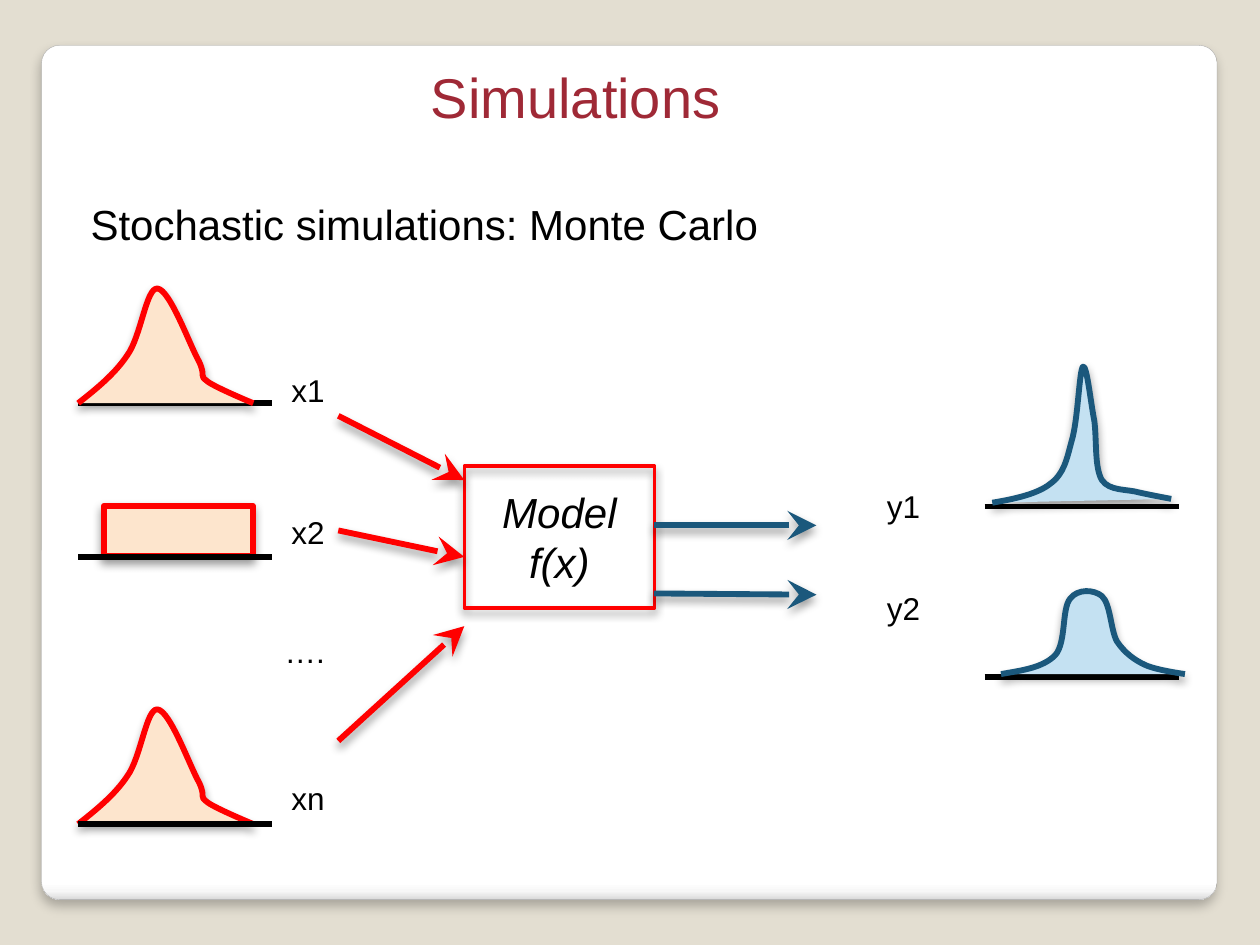
from dataclasses import dataclass

from lxml.etree import SubElement
from pptx import Presentation
from pptx.dml.color import RGBColor
from pptx.enum.shapes import MSO_CONNECTOR, MSO_SHAPE
from pptx.enum.text import MSO_ANCHOR, MSO_AUTO_SIZE, PP_ALIGN
from pptx.oxml import parse_xml
from pptx.oxml.ns import nsdecls, qn
from pptx.util import Inches, Pt

# Grid: 100 columns by 75 rows
COLS, ROWS = 100, 75
CELL = Inches(10) // COLS

BACKGROUND = RGBColor(0xE3, 0xDE, 0xD1)
PANEL_LINE = RGBColor(0xA4, 0xA4, 0xA4)
CRIMSON = RGBColor(0x9F, 0x29, 0x36)
BLACK = RGBColor(0, 0, 0)
RED = RGBColor(0xFF, 0, 0)
PEACH = RGBColor(0xFD, 0xE5, 0xCD)
NAVY = RGBColor(0x1B, 0x58, 0x7C)
SKY = RGBColor(0xC4, 0xE1, 0xF2)
FONT = "Arial"
STROKE = 3.35
AXIS_COLS = 15.4
INPUT_COL, OUTPUT_COL = 6.2, 78.15
PANEL_STOPS = [(0, "FFFFFF"), (98, "FFFFFF"), (99, "F7F7F7"), (100, "DADADA")]

Point = tuple[float, float]


@dataclass
class Label:
    text: str
    col: float
    row: float
    cols: float
    rows: float = 4
    size: int = 18
    italic: bool = False
    align: PP_ALIGN = PP_ALIGN.LEFT
    wrap: bool = False


@dataclass
class Arrow:
    start: Point
    end: Point
    color: RGBColor


@dataclass
class Curve:
    """Bezier outline: a start point, then three points per segment,
    measured from the left end of the axis."""
    points: list[Point]
    fill: RGBColor
    line: RGBColor


BELL = Curve([(0, 0), (1.4, -1.1), (2.9, -2.3), (3.9, -3.8),
              (5, -5.3), (5.4, -9.2), (6.3, -9.1),
              (7.3, -9), (8.9, -4.5), (9.6, -3.3),
              (10.2, -2), (9.5, -2.3), (10.3, -1.7),
              (11, -1.2), (13.9, 0), (13.9, 0)], PEACH, RED)
SPIKE = Curve([(0.6, -0.3), (2.4, -0.6), (4.2, -1), (5.2, -1.8),
               (6.3, -2.6), (6.5, -3.7), (6.9, -5.2),
               (7.4, -6.8), (7.5, -10.8), (7.8, -11.1),
               (8.1, -11.3), (8.4, -8.3), (8.7, -6.8),
               (8.9, -5.3), (8.7, -3.1), (9.3, -2.1),
               (9.9, -1.2), (11.3, -1.4), (12.3, -1.1),
               (13.2, -0.9), (14.8, -0.6), (14.8, -0.6)], SKY, NAVY)
DOME = Curve([(1.3, -0.2), (3, -0.5), (4.6, -0.7), (5.6, -1.7),
              (6.5, -2.7), (6.1, -5.4), (6.8, -6.2),
              (7.4, -7), (8.7, -6.9), (9.3, -6.4),
              (10, -5.8), (10, -3.7), (10.5, -2.8),
              (11.1, -1.9), (11.9, -1.3), (12.8, -0.9),
              (13.7, -0.5), (15.9, -0.2), (15.9, -0.2)], SKY, NAVY)


def grid(*lengths: float) -> list[int]:
    return [round(length * CELL) for length in lengths]


def add_effects(sp, blur: float = 5.2, dist: float = 3, alpha: int = 40) -> None:
    """Give a shape a soft shadow below, or none when alpha is 0."""
    shadow = (f'<a:outerShdw blurRad="{Pt(blur)}" dist="{Pt(dist)}" dir="5400000"'
              f' algn="ctr" rotWithShape="0"><a:srgbClr val="000000">'
              f'<a:alpha val="{alpha * 1000}"/></a:srgbClr></a:outerShdw>') if alpha else ""
    spPr = sp._element.spPr
    for old in spPr.findall(qn("a:effectLst")):
        spPr.remove(old)
    spPr.append(parse_xml(f'<a:effectLst {nsdecls("a")}>{shadow}</a:effectLst>'))


def set_line(sp, color: RGBColor, width: float) -> None:
    sp.line.color.rgb = color
    sp.line.width = Pt(width)


def add_box(s, kind: MSO_SHAPE, box: tuple, line: RGBColor, width: float,
            fill: RGBColor | None = None):
    sp = s.shapes.add_shape(kind, *grid(*box))
    if fill is None:
        sp.fill.background()
    else:
        sp.fill.solid()
        sp.fill.fore_color.rgb = fill
    set_line(sp, line, width)
    add_effects(sp)
    return sp


def add_panel(s) -> None:
    sp = add_box(s, MSO_SHAPE.ROUNDED_RECTANGLE, (3.3, 3.6, 93.3, 67.8), PANEL_LINE, 0.16)
    sp.adjustments[0] = 0.021
    stops = "".join(f'<a:gs pos="{pos * 1000}"><a:srgbClr val="{color}"/></a:gs>'
                    for pos, color in PANEL_STOPS)
    spPr = sp._element.spPr
    spPr.replace(spPr.find(qn("a:noFill")), parse_xml(
        f'<a:gradFill {nsdecls("a")} rotWithShape="1"><a:gsLst>{stops}</a:gsLst>'
        '<a:lin ang="5400000" scaled="0"/></a:gradFill>'))
    add_effects(sp, 6, 4, 25)
    s.shapes._spTree.insert(2, sp._element)  # behind the title


def format_text(tf, label: Label, color: RGBColor = BLACK) -> None:
    tf.text = label.text
    tf.word_wrap = label.wrap
    tf.auto_size = MSO_AUTO_SIZE.SHAPE_TO_FIT_TEXT
    tf.vertical_anchor = MSO_ANCHOR.TOP
    for p in tf.paragraphs:
        p.alignment = label.align
        p.font.name = FONT
        p.font.size = Pt(label.size)
        p.font.italic = label.italic
        p.font.color.rgb = color


def add_label(s, label: Label) -> None:
    tb = s.shapes.add_textbox(*grid(label.col, label.row, label.cols, label.rows))
    format_text(tb.text_frame, label)


def add_line(s, start: Point, end: Point, color: RGBColor):
    cn = s.shapes.add_connector(MSO_CONNECTOR.STRAIGHT, *grid(*start, *end))
    set_line(cn, color, STROKE)
    add_effects(cn, alpha=0)
    return cn


def add_arrow(s, arrow: Arrow) -> None:
    cn = add_line(s, arrow.start, arrow.end, arrow.color)
    SubElement(cn.line._get_or_add_ln(), qn("a:tailEnd"), type="stealth", w="lg", len="lg")
    add_effects(cn)


def add_axis(s, col: float, row: float) -> None:
    add_line(s, (col, row), (col + AXIS_COLS, row), BLACK)


def add_curve(s, curve: Curve, col: float, row: float) -> None:
    start, *rest = [grid(col + x, row + y) for x, y in curve.points]
    fb = s.shapes.build_freeform(*start)
    fb.add_line_segments(rest, close=False)
    sp = fb.convert_to_shape()
    # Turn every three straight segments into one cubic Bezier
    segments = list(sp._element.iter(qn("a:lnTo")))
    for i in range(0, len(segments), 3):
        bezier = SubElement(segments[i].getparent(), qn("a:cubicBezTo"))
        for segment in segments[i:i + 3]:
            bezier.append(segment[0])
            segment.getparent().remove(segment)
    sp.fill.solid()
    sp.fill.fore_color.rgb = curve.fill
    set_line(sp, curve.line, STROKE)
    add_effects(sp)


def main() -> None:
    prs = Presentation()
    prs.slide_width, prs.slide_height = COLS * CELL, ROWS * CELL
    s = prs.slides.add_slide(prs.slide_layouts[5])
    s.background.fill.solid()
    s.background.fill.fore_color.rgb = BACKGROUND

    # Panel and title
    add_panel(s)
    title = Label("Simulations", 33.2, 4.45, 26, 6.4, 32)
    sp = s.shapes.title
    sp.left, sp.top, sp.width, sp.height = grid(title.col, title.row, title.cols, title.rows)
    format_text(sp.text_frame, title, CRIMSON)

    # Uniform input and model box
    add_box(s, MSO_SHAPE.RECTANGLE, (8.25, 40.15, 11.8, 4), RED, 3.5, PEACH)
    add_box(s, MSO_SHAPE.RECTANGLE, (36.85, 37, 15.1, 11.25), RED, 2)

    # Labels
    for label in (
        Label("Stochastic simulations: Monte Carlo", 6.2, 15.25, 55.5, 5.1, 24),
        Label("Model\nf(x)", 38.4, 38.1, 12, 9.1, 24, True, PP_ALIGN.CENTER),
        Label("x1", 22.15, 28.95, 4.7),
        Label("x2", 22.15, 40.2, 4.7),
        Label("….", 21.6, 49.7, 5.2),
        Label("xn", 22.15, 61.35, 4.7, wrap=True),
        Label("y1", 69.4, 38.2, 4.8),
        Label("y2", 69.4, 46.25, 4.8),
    ):
        add_label(s, label)

    # Arrows into and out of the model
    for start_row, end_row in ((33, 38.1), (42.1, 44.2), (58.8, 49.7)):
        add_arrow(s, Arrow((26.85, start_row), (36.85, end_row), RED))
    for start_row, end_row in ((41.7, 41.7), (47.1, 47.2)):
        add_arrow(s, Arrow((51.9, start_row), (64.8, end_row), NAVY))

    # Axes and distributions
    add_axis(s, INPUT_COL, 32)
    for row in (32, 65.4):
        add_curve(s, BELL, INPUT_COL, row)
    for col, row in ((INPUT_COL, 65.4), (INPUT_COL, 44.2), (OUTPUT_COL, 40.2), (OUTPUT_COL, 53.7)):
        add_axis(s, col, row)
    add_curve(s, SPIKE, OUTPUT_COL, 40.2)
    add_curve(s, DOME, OUTPUT_COL, 53.7)

    prs.save("out.pptx")


if __name__ == "__main__":
    main()
